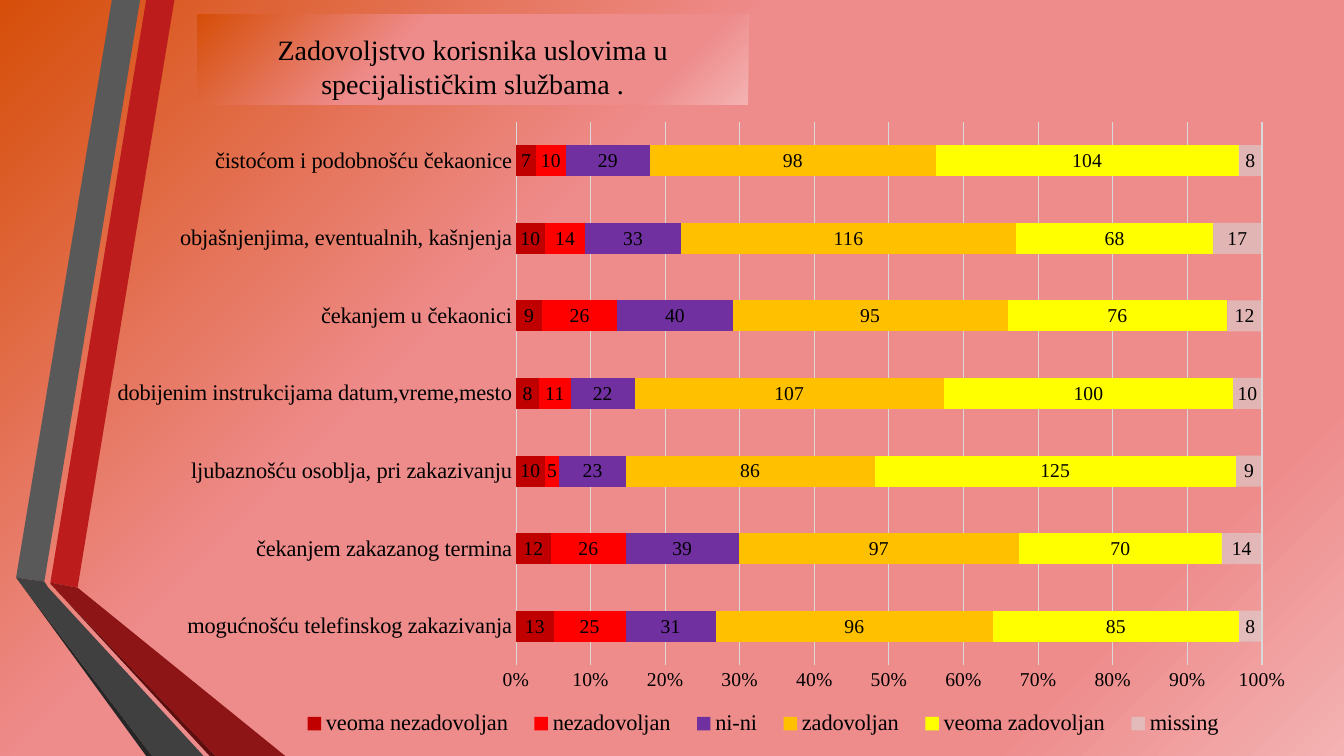
from lxml import etree
from pptx import Presentation
from pptx.chart.data import CategoryChartData
from pptx.dml.color import RGBColor
from pptx.enum.chart import XL_CHART_TYPE as ChartType, XL_LABEL_POSITION as LabelPosition
from pptx.enum.chart import XL_LEGEND_POSITION as LegendPosition, XL_TICK_MARK as TickMark
from pptx.enum.text import MSO_ANCHOR, PP_ALIGN
from pptx.oxml import parse_xml
from pptx.oxml.ns import nsdecls, qn
from pptx.util import Inches, Pt

FONT = "Times New Roman"
COLORS = {
    "text": "000000", "grid": "D9D9D9",
    "red band": "BC1C1C", "gray band": "595959", "gray edge": "262626",
    "red edge": "5E0E0E", "red fold": "8D1515", "gray fold": "404040",
}
GRADIENT = [(0, "D64E09"), (37, "EE8C8C"), (83, "EE8C8C"), (100, "F4B2B2")]

TITLE = "Zadovoljstvo korisnika uslovima u specijalističkim službama ."
CATEGORIES = [
    "mogućnošću telefinskog zakazivanja",
    "čekanjem zakazanog termina",
    "ljubaznošću osoblja, pri zakazivanju",
    "dobijenim instrukcijama datum,vreme,mesto",
    "čekanjem u čekaonici",
    "objašnjenjima, eventualnih, kašnjenja",
    "čistoćom i podobnošću čekaonice",
]
SERIES = [
    ("veoma nezadovoljan", "C00000", (13, 12, 10, 8, 9, 10, 7)),
    ("nezadovoljan", "FF0000", (25, 26, 5, 11, 26, 14, 10)),
    ("ni-ni", "7030A0", (31, 39, 23, 22, 40, 33, 29)),
    ("zadovoljan", "FFC000", (96, 97, 86, 107, 95, 116, 98)),
    ("veoma zadovoljan", "FFFF00", (85, 70, 125, 100, 76, 68, 104)),
    ("missing", "D9D9D9", (8, 14, 9, 10, 12, 17, 8)),
]
MISSING_OPACITY = 54

# Folded ribbons on the left, corner points in inches
RIBBONS = [
    ("red band", [(0.5, 5.78), (0.77, 5.83), (1.73, 0), (1.45, 0)]),
    ("gray band", [(1.39, 0), (1.11, 0), (0.16, 5.73), (0.44, 5.77)]),
    ("gray edge", [(0.16, 5.73), (1.45, 7.5), (1.51, 7.5)]),
    ("red edge", [(0.5, 5.79), (2.08, 7.5), (2.14, 7.5)]),
    ("red fold", [(0.5, 5.78), (0.5, 5.79), (2.14, 7.5), (2.83, 7.5), (0.77, 5.83)]),
    ("gray fold", [(2.02, 7.5), (0.48, 5.83), (0.44, 5.77), (0.16, 5.73), (1.51, 7.5)]),
]


def rgb(name):
    return RGBColor.from_string(COLORS.get(name, name))


def set_font(font, size):
    font.name = FONT
    font.size = Pt(size)
    font.bold = False
    font.color.rgb = rgb("text")


def set_gradient(fill, element):
    """Fill with a gradient that spreads from the top left corner."""
    fill.solid()
    fill.fore_color.rgb = rgb(GRADIENT[0][1])
    stops = "".join(f'<a:gs pos="{pos * 1000}"><a:srgbClr val="{color}"/></a:gs>'
                    for pos, color in GRADIENT)
    solid = next(element.iter(qn("a:solidFill")))
    solid.getparent().replace(solid, parse_xml(
        f'<a:gradFill {nsdecls("a")} rotWithShape="1"><a:gsLst>{stops}</a:gsLst>'
        '<a:path path="circle"><a:fillToRect r="100000" b="100000"/></a:path></a:gradFill>'))


def set_layout(element, index, x, y, width, height, inner=False):
    """Place a chart part by fractions of the chart area."""
    for old in element.findall(qn("c:layout")):
        element.remove(old)
    target = '<c:layoutTarget val="inner"/>' if inner else ""
    element.insert(index, parse_xml(
        f'<c:layout {nsdecls("c")}><c:manualLayout>{target}'
        '<c:xMode val="edge"/><c:yMode val="edge"/>'
        f'<c:x val="{x}"/><c:y val="{y}"/><c:w val="{width}"/><c:h val="{height}"/>'
        '</c:manualLayout></c:layout>'))


def add_ribbons(slide):
    for color, points in RIBBONS:
        start, *rest = [(Inches(x), Inches(y)) for x, y in points]
        builder = slide.shapes.build_freeform(*start)
        builder.add_line_segments(rest, close=True)
        shape = builder.convert_to_shape()
        shape.shadow.inherit = False
        shape.fill.solid()
        shape.fill.fore_color.rgb = rgb(color)
        shape.line.fill.background()


def add_title(slide):
    title = slide.shapes.title
    title.left, title.top = Inches(1.96), Inches(0.14)
    title.width, title.height = Inches(5.46), Inches(0.9)
    set_gradient(title.fill, title.element)
    frame = title.text_frame
    frame.word_wrap = True
    frame.vertical_anchor = MSO_ANCHOR.BOTTOM
    paragraph = frame.paragraphs[0]
    paragraph.alignment = PP_ALIGN.CENTER
    run = paragraph.add_run()
    run.text = TITLE
    set_font(run.font, 20)


def add_satisfaction_chart(slide):
    data = CategoryChartData()
    data.categories = CATEGORIES
    for name, _, values in SERIES:
        data.add_series(name, values)
    chart = slide.shapes.add_chart(
        ChartType.BAR_STACKED_100, Inches(0.93), Inches(1.09),
        Inches(12.07), Inches(6.31), data).chart
    set_font(chart.font, 14)
    chart.has_title = False

    # Bars and their values
    plot = chart.plots[0]
    plot.gap_width, plot.overlap = 150, 100
    plot.vary_by_categories = False
    for series, (_, color, _) in zip(plot.series, SERIES):
        series.format.fill.solid()
        series.format.fill.fore_color.rgb = rgb(color)
        labels = series.data_labels
        labels.show_value = True
        labels.position = LabelPosition.CENTER
        set_font(labels.font, 14)
    missing_color = next(plot.series[-1].format.fill._xPr.iter(qn("a:srgbClr")))
    etree.SubElement(missing_color, qn("a:alpha"), val=str(MISSING_OPACITY * 1000))

    # Axes
    for axis, size in ((chart.category_axis, 16), (chart.value_axis, 14)):
        axis.major_tick_mark = axis.minor_tick_mark = TickMark.NONE
        set_font(axis.tick_labels.font, size)
    values = chart.value_axis
    values.minimum_scale, values.maximum_scale, values.major_unit = 0, 1, 0.1
    values.tick_labels.number_format = "0%"
    values.tick_labels.number_format_is_linked = False
    values.format.line.fill.background()
    values.has_major_gridlines = True
    for line in (values.major_gridlines.format.line, chart.category_axis.format.line):
        line.color.rgb = rgb("grid")
        line.width = Pt(0.75)

    # Legend and plot area
    chart.has_legend = True
    legend = chart.legend
    legend.position = LegendPosition.BOTTOM
    legend.include_in_layout = False
    set_font(legend.font, 16)
    set_layout(legend._element, 1, 0.16, 0.93, 0.78, 0.07)
    plot_area = next(chart._chartSpace.iter(qn("c:plotArea")))
    set_layout(plot_area, 0, 0.347, 0.019, 0.613, 0.854, inner=True)


def main():
    presentation = Presentation()
    presentation.slide_width, presentation.slide_height = Inches(13.33), Inches(7.5)
    slide = presentation.slides.add_slide(presentation.slide_layouts[5])
    set_gradient(slide.background.fill, slide.element)
    add_ribbons(slide)
    add_title(slide)
    add_satisfaction_chart(slide)
    presentation.save("out.pptx")


if __name__ == "__main__":
    main()
